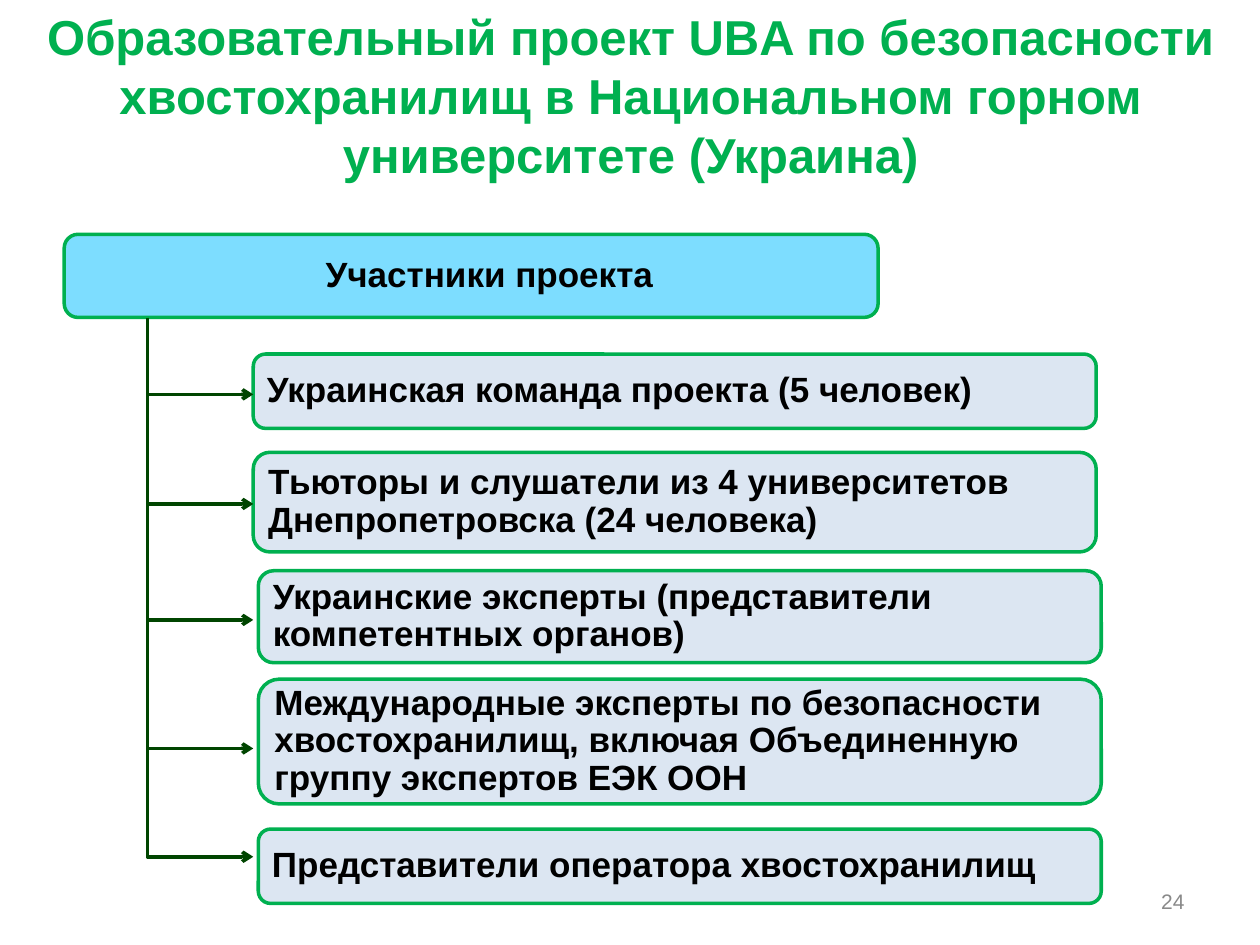
from dataclasses import dataclass
from itertools import pairwise

from lxml import etree
from pptx import Presentation
from pptx.dml.color import RGBColor
from pptx.enum.shapes import MSO_SHAPE
from pptx.enum.text import MSO_ANCHOR, PP_ALIGN
from pptx.oxml.ns import qn
from pptx.util import Inches, Pt

ROUND = MSO_SHAPE.ROUNDED_RECTANGLE
MIDDLE = MSO_ANCHOR.MIDDLE
LEFT, CENTER, RIGHT = PP_ALIGN.LEFT, PP_ALIGN.CENTER, PP_ALIGN.RIGHT


@dataclass(frozen=True)
class Theme:
    font: str = "Arial"
    green: str = "00B050"
    dark: str = "004500"
    sky: str = "7DDDFF"
    pale: str = "DCE6F2"
    black: str = "000000"
    gray: str = "898989"
    title: int = 28
    body: int = 20
    small: int = 12
    line: int = 2


def rgb(code):
    return RGBColor.from_string(code)


def write(frame, text, *, font, size, color, bold=True, align=LEFT,
          space=1.0, pad=None, indent=0):
    frame.word_wrap = True
    frame.vertical_anchor = MIDDLE
    if pad is not None:
        frame.margin_left = frame.margin_right = Inches(pad)
        frame.margin_top = frame.margin_bottom = Inches(pad)
    para = frame.paragraphs[0]
    para.alignment = align
    para.line_spacing = space
    if indent:
        para._p.get_or_add_pPr().set("marL", str(Inches(indent)))
    run = para.add_run()
    run.text = text
    run.font.name = font
    run.font.size = Pt(size)
    run.font.bold = bold
    run.font.color.rgb = rgb(color)


class Deck:
    def __init__(self, theme):
        self.theme = theme
        self.show = Presentation()
        self.show.slide_width = Inches(10)
        self.show.slide_height = Inches(7.5)
        self.slide = self.show.slides.add_slide(self.show.slide_layouts[6])

    def label(self, text, area, **style):
        box = self.slide.shapes.add_textbox(*map(Inches, area))
        write(box.text_frame, text, font=self.theme.font, **style)

    def card(self, text, area, fill, **style):
        theme = self.theme
        card = self.slide.shapes.add_shape(ROUND, *map(Inches, area))
        card.shadow.inherit = False
        card.fill.solid()
        card.fill.fore_color.rgb = rgb(fill)
        card.line.color.rgb = rgb(theme.green)
        card.line.width = Pt(theme.line)
        write(card.text_frame, text, font=theme.font, size=theme.body,
              color=theme.black, space=0.9, pad=0.08, **style)

    def branch(self, left, top, right, bottom):
        pen = self.slide.shapes.build_freeform(Inches(left), Inches(top))
        ends = [(left, bottom), (right, bottom)]
        pen.add_line_segments([(Inches(x), Inches(y)) for x, y in ends],
                              close=False)
        elbow = pen.convert_to_shape()
        elbow.shadow.inherit = False
        elbow.fill.background()
        elbow.line.color.rgb = rgb(self.theme.dark)
        elbow.line.width = Pt(self.theme.line)
        line = elbow.line._get_or_add_ln()
        etree.SubElement(line, qn("a:tailEnd"), type="arrow")


def main():
    theme = Theme()
    deck = Deck(theme)
    deck.card("Участники проекта", (0.51, 1.86, 6.46, 0.66), theme.sky,
              align=CENTER, indent=0.29)

    groups = [
        ("Украинская команда проекта (5 человек)", 2.01, 2.81, 0.59),
        ("Тьюторы и слушатели из 4 университетов "
         "Днепропетровска (24 человека)", 2.01, 3.59, 0.79),
        ("Украинские эксперты (представители компетентных органов)",
         2.05, 4.53, 0.73),
        ("Международные эксперты по безопасности хвостохранилищ, "
         "включая Объединенную группу экспертов ЕЭК ООН",
         2.05, 5.39, 0.99),
        ("Представители оператора хвостохранилищ", 2.05, 6.58, 0.59),
    ]
    for text, left, top, height in groups:
        deck.card(text, (left, top, 6.69, height), theme.pale)

    deck.label("24", (7.17, 6.95, 2.33, 0.4), size=theme.small,
               color=theme.gray, bold=False, align=RIGHT)
    deck.label("Образовательный проект UBA по безопасности хвостохранилищ "
               "в Национальном горном университете (Украина)",
               (0.2, 0.36, 9.61, 0.79), size=theme.title,
               color=theme.green, align=CENTER)

    stops = [2.52, 3.13, 4, 4.92, 5.94, 6.8]
    for top, bottom in pairwise(stops):
        deck.branch(1.17, top, 2.01, bottom)

    deck.show.save("out.pptx")


if __name__ == "__main__":
    main()
